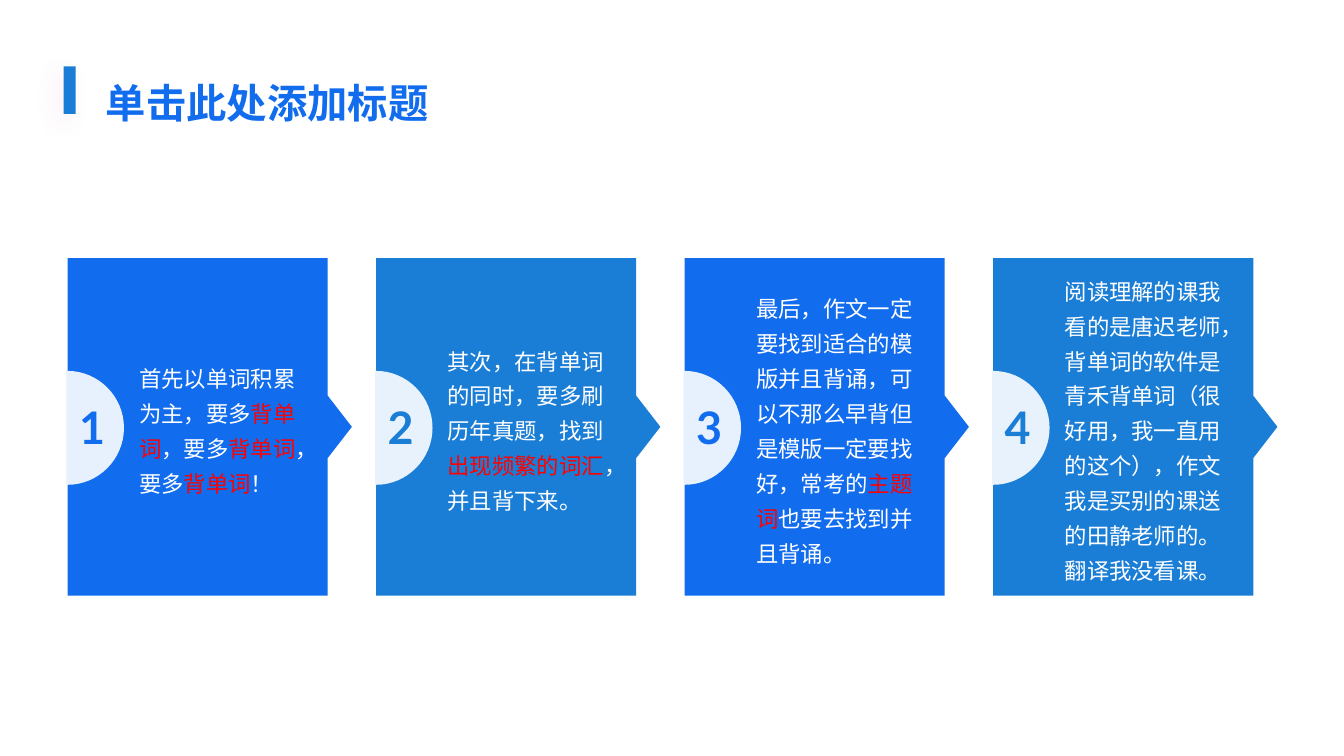
"""Build a slide with four numbered arrow panels under a title."""
from lxml import etree
from pptx import Presentation
from pptx.dml.color import RGBColor
from pptx.enum.shapes import MSO_SHAPE
from pptx.enum.text import MSO_ANCHOR, MSO_AUTO_SIZE, PP_ALIGN
from pptx.oxml.ns import qn
from pptx.util import Inches, Pt

RECTANGLE = MSO_SHAPE.RECTANGLE
MIDDLE, BOTTOM = MSO_ANCHOR.MIDDLE, MSO_ANCHOR.BOTTOM
LEFT, CENTER = PP_ALIGN.LEFT, PP_ALIGN.CENTER
NO_AUTOFIT = MSO_AUTO_SIZE.NONE

FONT = "Lato"
BLUE, SKY, WHITE, RED = "116CEE", "1B7ED6", "FFFFFF", "FF0000"
TITLE = "单击此处添加标题"
THEMES = [(BLUE, "E7F0FD"), (SKY, "E7F2FC")]
PANELS = [
    [("首先以单词积累为主，要多", WHITE), ("背单词", RED), ("，要多", WHITE),
     ("背单词", RED), ("，要多", WHITE), ("背单词", RED), ("！", WHITE)],
    [("其次，在背单词的同时，要多刷历年真题，找到", WHITE),
     ("出现频繁的词汇", RED), ("，并且背下来。", WHITE)],
    [("最后，作文一定要找到适合的模版并且背诵，可以不那么早背但是模版一定要找好，常考的", WHITE),
     ("主题词", RED), ("也要去找到并且背诵。", WHITE)],
    [("阅读理解的课我看的是唐迟老师，背单词的软件是青禾背单词（很好用，我一直用的这个），"
      "作文我是买别的课送的田静老师的。翻译我没看课。", WHITE)],
]

PANEL_LEFT, PANEL_TOP, PANEL_STEP = 0.67, 2.56, 3.06
BODY_WIDTH, PANEL_HEIGHT = 2.58, 3.35
TIP_WIDTH, TIP_HALF = 0.24, 0.31
BADGE_TOP, BADGE_WIDTH, BADGE_HEIGHT, BADGE_EDGE = 3.68, 0.57, 1.13, 0.01
CURVE = 0.55


def color(value):
    return RGBColor.from_string(value)


def paint(shape, fill):
    shape.shadow.inherit = False
    shape.fill.solid()
    shape.fill.fore_color.rgb = color(fill)
    shape.line.fill.background()


def add_outline(slide, points, fill):
    corners = [(Inches(x), Inches(y)) for x, y in points]
    builder = slide.shapes.build_freeform(*corners[0])
    builder.add_line_segments(corners[1:], close=True)
    shape = builder.convert_to_shape()
    paint(shape, fill)
    return shape


def add_half_disc(slide, left, fill):
    right, bottom = left + BADGE_WIDTH, BADGE_TOP + BADGE_HEIGHT
    start = left + BADGE_EDGE
    middle = BADGE_TOP + BADGE_HEIGHT / 2
    badge = add_outline(slide, [
        (start, BADGE_TOP), (right, middle), (start, bottom),
        (left, bottom), (left, BADGE_TOP)], fill)
    reach_x = (right - start) * CURVE
    reach_y = BADGE_HEIGHT / 2 * CURVE
    curves = [
        [(start + reach_x, BADGE_TOP), (right, middle - reach_y), (right, middle)],
        [(right, middle + reach_y), (start + reach_x, bottom), (start, bottom)],
    ]
    lines = list(badge._element.iter(qn("a:lnTo")))
    for line, curve in zip(lines, curves):
        bezier = etree.Element(qn("a:cubicBezTo"))
        for x, y in curve:
            etree.SubElement(bezier, qn("a:pt"), x=str(Inches(x) - badge.left),
                             y=str(Inches(y) - badge.top))
        line.getparent().replace(line, bezier)
    return badge


def set_text(shape, runs, size, margins, anchor, align, bold=False, wrap=True):
    frame = shape.text_frame
    frame.auto_size = NO_AUTOFIT
    frame.word_wrap = wrap
    frame.vertical_anchor = anchor
    (frame.margin_left, frame.margin_top,
     frame.margin_right, frame.margin_bottom) = map(Inches, margins)
    paragraph = frame.paragraphs[0]
    paragraph.alignment = align
    paragraph.font.name = FONT
    paragraph.font.size = Pt(size)
    paragraph.font.bold = bold
    for text, run_color in runs:
        run = paragraph.add_run()
        run.text = text
        run.font.color.rgb = color(run_color)
    return paragraph


def add_accent_bar(slide):
    bar = slide.shapes.add_shape(
        RECTANGLE, Inches(0.63), Inches(0.66), Inches(0.12), Inches(0.47))
    paint(bar, SKY)
    effects = bar._element.spPr.find(qn("a:effectLst"))
    shadow = etree.SubElement(
        effects, qn("a:outerShdw"), blurRad=str(Pt(16)), dist=str(Pt(8)),
        dir=str(135 * 60000), algn="ctr", rotWithShape="0")
    tint = etree.SubElement(shadow, qn("a:srgbClr"), val="FF5DA9")
    etree.SubElement(tint, qn("a:alpha"), val="10000")


def add_panel(slide, index, runs):
    fill, badge_fill = THEMES[index % len(THEMES)]
    left = PANEL_LEFT + index * PANEL_STEP
    right = left + BODY_WIDTH
    bottom = PANEL_TOP + PANEL_HEIGHT
    middle = PANEL_TOP + PANEL_HEIGHT / 2
    panel = add_outline(slide, [
        (right, PANEL_TOP), (right, middle - TIP_HALF),
        (right + TIP_WIDTH, middle), (right, middle + TIP_HALF),
        (right, bottom), (left, bottom), (left, PANEL_TOP)], fill)
    paragraph = set_text(panel, runs, 16, (0.71, 0.52, 0.47, 0.52), MIDDLE, LEFT)
    paragraph.line_spacing = 1.3
    badge = add_half_disc(slide, left - BADGE_EDGE, badge_fill)
    set_text(badge, [(str(index + 1), fill)], 32, (0.1, 0.21, 0.16, 0.23),
             MIDDLE, CENTER, bold=True, wrap=False)


def main():
    presentation = Presentation()
    presentation.slide_width = Inches(13.33)
    presentation.slide_height = Inches(7.5)
    slide = presentation.slides.add_slide(presentation.slide_layouts[5])
    add_accent_bar(slide)
    for index, runs in enumerate(PANELS):
        add_panel(slide, index, runs)
    title = slide.shapes.title
    title.left, title.top = Inches(0.95), Inches(0.62)
    title.width, title.height = Inches(11.71), Inches(0.64)
    set_text(title, [(TITLE, BLUE)], 28.8, (0.1, 0, 0.1, 0), BOTTOM, LEFT, bold=True)
    presentation.save("out.pptx")


if __name__ == "__main__":
    main()
